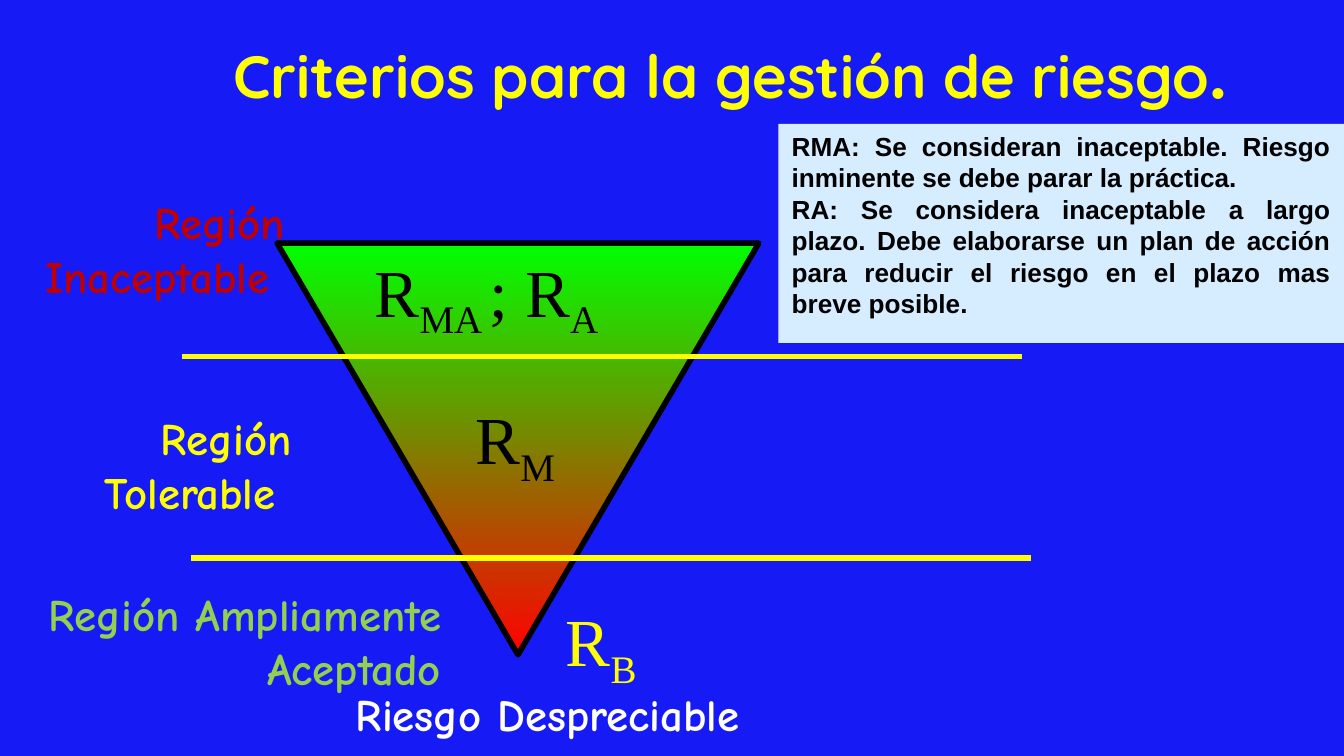
import pptx
import pptx.dml.color
import pptx.enum.dml
import pptx.enum.shapes
import pptx.enum.text
import pptx.oxml.ns
import pptx.util
from lxml import etree

Pt = pptx.util.Pt
Align = pptx.enum.text.PP_ALIGN
Anchor = pptx.enum.text.MSO_ANCHOR
Fit = pptx.enum.text.MSO_AUTO_SIZE
Shape = pptx.enum.shapes.MSO_SHAPE
YELLOW, BLACK = "FFFF00", "000000"
SERIF, HAND = "Times New Roman", "Comic Neue"


def tint(code):
    return pptx.dml.color.RGBColor.from_string(code)


class Board:
    """Style and current slide."""

    def __init__(self, slide, back):
        self.slide = slide
        self.home = slide.shapes
        slide.background.fill.solid()
        slide.background.fill.fore_color.rgb = tint(back)

    def group(self):
        self.home = self.slide.shapes.add_group_shape().shapes

    def ungroup(self):
        self.home = self.slide.shapes

    def font(self, part, face, size, color, bold=False):
        font = part.font
        font.name, font.size, font.bold = face, Pt(size), bold
        font.color.rgb = tint(color)

    def box(self, x, y, w, h, wrap=True, grow=True):
        frame = self.home.add_textbox(Pt(x), Pt(y), Pt(w), Pt(h)).text_frame
        frame.word_wrap = wrap
        frame.auto_size = Fit.SHAPE_TO_FIT_TEXT if grow else Fit.NONE
        return frame

    def title(self, x, y, w, h, text, end):
        frame = self.box(x, y, w, h, grow=False)
        frame.vertical_anchor = Anchor.MIDDLE
        para = frame.paragraphs[0]
        para.alignment = Align.CENTER
        for words, face, size in ((text, "Quicksand", 32), (end, SERIF, 36)):
            run = para.add_run()
            run.text = words
            self.font(run, face, size, YELLOW, True)

    def label(self, x, y, w, h, text, color, side=Align.RIGHT, wrap=True):
        para = self.box(x, y, w, h, wrap).paragraphs[0]
        para.text, para.alignment = text, side
        self.font(para, HAND, 24, color, True)

    def symbol(self, x, y, w, parts, color=BLACK):
        """Write parts in turn at normal height and as subscript."""
        para = self.box(x, y, w, 51).paragraphs[0]
        para.space_before = Pt(4)
        self.font(para, SERIF, 36, color)
        for i, text in enumerate(parts):
            run = para.add_run()
            run.text = text
            self.font(run, SERIF, 36, color)
            if i % 2:
                run._r.get_or_add_rPr().set("baseline", "-25000")

    def note(self, x, y, w, h, lines, fill):
        shape = self.home.add_shape(Shape.RECTANGLE, Pt(x), Pt(y), Pt(w), Pt(h))
        shape.shadow.inherit = False
        shape.fill.solid()
        shape.fill.fore_color.rgb = tint(fill)
        shape.line.fill.background()
        frame = shape.text_frame
        frame.word_wrap = True
        frame.vertical_anchor = Anchor.TOP
        for i, text in enumerate(lines):
            para = frame.add_paragraph() if i else frame.paragraphs[0]
            para.text, para.alignment = text, Align.JUSTIFY
            self.font(para, "Arial", 14, BLACK, True)

    def funnel(self, x, y, w, h, colors):
        shape = self.home.add_shape(
            Shape.ISOSCELES_TRIANGLE, Pt(x), Pt(y), Pt(w), Pt(h))
        shape.shadow.inherit = False
        shape._element.spPr.xfrm.set("flipV", "1")
        shape.fill.gradient()
        shape.fill.gradient_angle = 270
        for stop, code in zip(shape.fill.gradient_stops, colors):
            stop.color.rgb = tint(code)
        shape.line.color.rgb = tint(BLACK)
        shape.line.width = Pt(3)

    def rule(self, x, y, w):
        line = self.home.add_connector(
            pptx.enum.shapes.MSO_CONNECTOR.STRAIGHT,
            Pt(x), Pt(y), Pt(x + w), Pt(y))
        line.line.color.rgb = tint(YELLOW)
        line.line.width = Pt(3)
        etree.SubElement(line._element.spPr, pptx.oxml.ns.qn("a:effectLst"))


def main():
    deck = pptx.Presentation()
    deck.slide_width, deck.slide_height = Pt(720), Pt(405)
    board = Board(deck.slides.add_slide(deck.slide_layouts[6]), "161BF6")

    # Title and note
    board.title(110, 11, 562, 55, "Criterios para la gestión de riesgo", ".")
    board.note(417, 66.4, 303, 117.4, (
        "RMA: Se consideran inaceptable. Riesgo inminente se debe parar "
        "la práctica.",
        "RA: Se considera inaceptable a largo plazo. Debe elaborarse un plan "
        "de acción para reducir el riesgo en el plazo mas breve posible.",
    ), "D6ECFF")

    # Triangle with its borders and regions
    board.group()
    board.funnel(148.5, 130.3, 258, 220.5, ("FF0000", "00FF00"))
    board.rule(97.7, 191, 450)
    board.label(15, 216.7, 148.3, 65.5, "Región Tolerable ", YELLOW)
    board.rule(102.3, 298.8, 450)
    board.label(-3, 311, 246.3, 65.5, "Región Ampliamente Aceptado", "92D050")
    board.label(183.6, 364.5, 246.3, 36.7, "Riesgo Despreciable", "FFFFFF",
                Align.LEFT, False)

    # Risk symbols
    board.symbol(193.7, 130.3, 203.8, ("R", "MA ", "; R", "A"))
    board.symbol(247.7, 209.5, 72, ("R", "M"))
    board.symbol(296, 317.5, 84, ("R", "B"), YELLOW)

    # Upper region
    board.ungroup()
    board.label(0, 100.8, 159.8, 65.5, "Región Inaceptable ", "C00000")

    deck.save("out.pptx")


if __name__ == "__main__":
    main()
